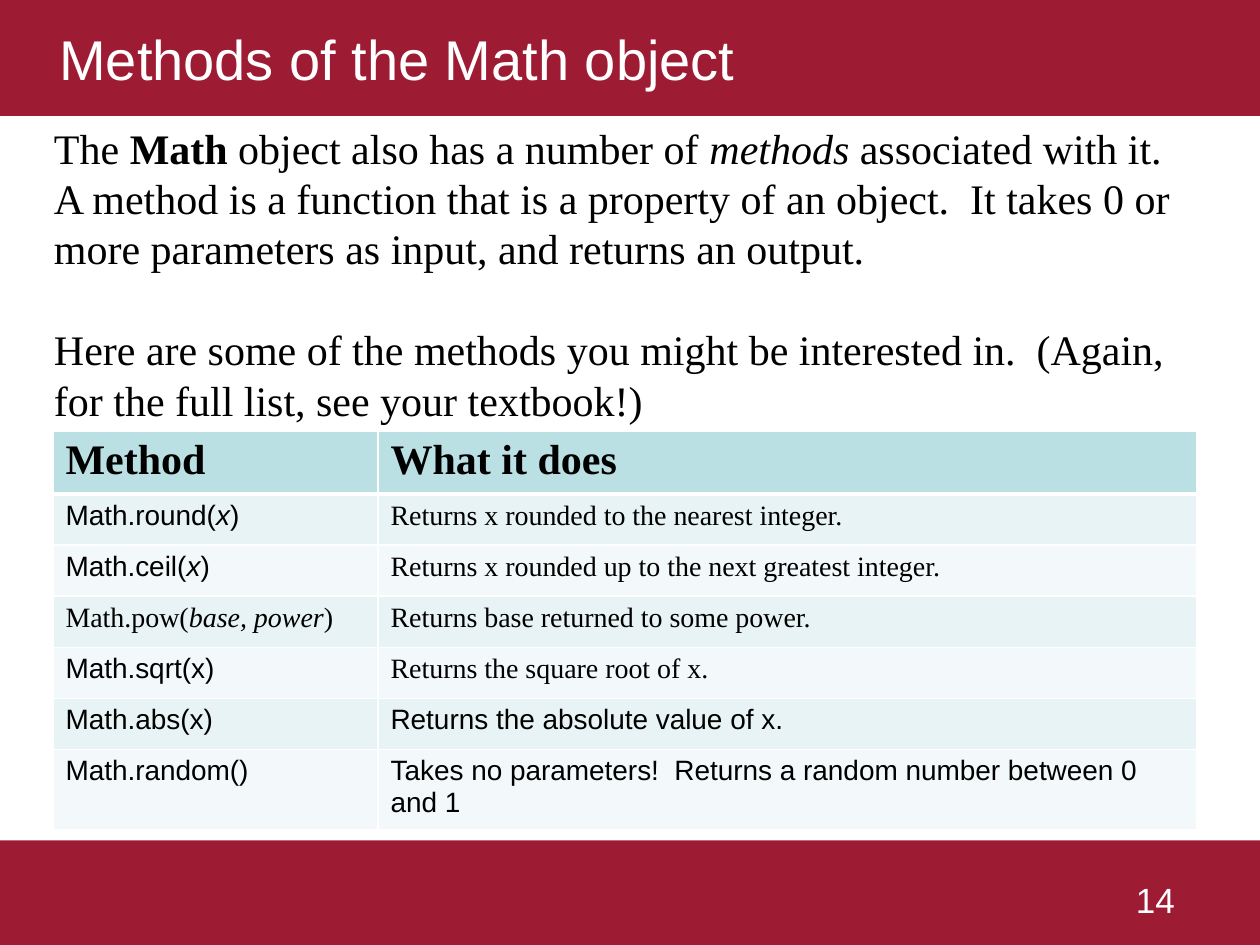
"""Build the slide on the methods of the Math object."""
from dataclasses import dataclass

import pptx
import pptx.dml.color
import pptx.enum.shapes
import pptx.enum.text
import pptx.oxml
import pptx.oxml.ns
import pptx.util

Inches = pptx.util.Inches
Pt = pptx.util.Pt
Align = pptx.enum.text.PP_ALIGN


@dataclass(frozen=True)
class Theme:
    """Colours, fonts and type sizes of the slide."""
    band: str = "9E1B34"
    light: str = "FFFFFF"
    ink: str = "000000"
    header: str = "BBE0E3"
    stripes: tuple = ("E7F3F4", "F3F9FA")
    sans: str = "Arial"
    serif: str = "Times New Roman"
    title: int = 32
    body: int = 24
    number: int = 20
    cell: int = 16


THEME = Theme()
PLAIN, BOLD, ITALIC = {}, {"bold": True}, {"italic": True}

INTRO = [
    [("The ", PLAIN), ("Math", BOLD), (" object also has a number of ", PLAIN),
     ("methods", ITALIC),
     (" associated with it.  A method is a function that is a property of an object.  "
      "It takes 0 or more parameters as input, and returns an output.", PLAIN)],
    [("Here are some of the methods you might be interested in.  "
      "(Again, for the full list, see your textbook!)", PLAIN)],
]

METHODS = [
    ("round", "x", ITALIC, THEME.sans, "Returns x rounded to the nearest integer.", THEME.serif),
    ("ceil", "x", ITALIC, THEME.sans,
     "Returns x rounded up to the next greatest integer.", THEME.serif),
    ("pow", "base, power", ITALIC, THEME.serif,
     "Returns base returned to some power.", THEME.serif),
    ("sqrt", "x", PLAIN, THEME.sans, "Returns the square root of x.", THEME.serif),
    ("abs", "x", PLAIN, THEME.sans, "Returns the absolute value of x.", THEME.sans),
    ("random", "", PLAIN, THEME.sans,
     "Takes no parameters!  Returns a random number between 0 and 1", THEME.sans),
]


def apply(target, values):
    """Set each named attribute on the target."""
    for name, value in values.items():
        setattr(target, name, value)


def place(left, top, width, height):
    """Return a position and size in inches as attribute values."""
    return {"left": Inches(left), "top": Inches(top),
            "width": Inches(width), "height": Inches(height)}


def paint(filled, color):
    """Give a shape or a cell a solid fill."""
    filled.fill.solid()
    filled.fill.fore_color.rgb = pptx.dml.color.RGBColor.from_string(color)


def write(paragraph, runs, font, size, color=THEME.ink):
    """Add styled runs to a paragraph."""
    for text, style in runs:
        run = paragraph.add_run()
        run.text = text
        apply(run.font, {"name": font, "size": Pt(size), "bold": False, "italic": False, **style})
        run.font.color.rgb = pptx.dml.color.RGBColor.from_string(color)


def add_title(slide, text):
    """Fill the title placeholder as the top band."""
    title = slide.shapes.title
    apply(title, place(0, 0, 10, 0.92))
    paint(title, THEME.band)
    apply(title.text_frame, {"margin_left": Inches(0.47), "word_wrap": True,
                             "auto_size": pptx.enum.text.MSO_AUTO_SIZE.NONE,
                             "vertical_anchor": pptx.enum.text.MSO_ANCHOR.MIDDLE})
    heading = title.text_frame.paragraphs[0]
    heading.alignment = Align.LEFT
    write(heading, [(text, PLAIN)], THEME.sans, THEME.title, THEME.light)


def add_footer(slide):
    """Draw the bottom band."""
    footer = slide.shapes.add_shape(pptx.enum.shapes.MSO_SHAPE.RECTANGLE,
                                    **place(0, 6.67, 10, 0.83))
    footer.shadow.inherit = False
    paint(footer, THEME.band)
    footer.line.fill.background()


def add_text(slide, box, paragraphs, font, size, color, alignment):
    """Add a wrapping text box with paragraphs one line apart."""
    frame = slide.shapes.add_textbox(**box).text_frame
    frame.word_wrap = True
    for index, runs in enumerate(paragraphs):
        paragraph = frame.paragraphs[0] if index == 0 else frame.add_paragraph()
        paragraph.alignment = alignment
        if index:
            paragraph.space_before = Pt(size * 1.2)
        write(paragraph, runs, font, size, color)


def add_borders(cell, top, bottom):
    """Draw light borders around a cell, with widths in points."""
    properties = cell._tc.get_or_add_tcPr()
    for side, width in {"L": 1, "R": 1, "T": top, "B": bottom}.items():
        properties.append(pptx.oxml.parse_xml(
            f'<a:ln{side} {pptx.oxml.ns.nsdecls("a")} w="{Pt(width)}"><a:solidFill>'
            f'<a:srgbClr val="{THEME.light}"/></a:solidFill></a:ln{side}>'))


def add_methods(slide):
    """Add the table of methods and what they do."""
    rows = [[([("Method", BOLD)], THEME.serif), ([("What it does", BOLD)], THEME.serif)]]
    for name, parameters, style, name_font, effect, effect_font in METHODS:
        call = [(f"Math.{name}(", PLAIN), (parameters, style), (")", PLAIN)]
        if not style:
            call = [(f"Math.{name}({parameters})", PLAIN)]
        rows.append([(call, name_font), ([(effect, PLAIN)], effect_font)])
    methods = slide.shapes.add_table(len(rows), 2, **place(0.42, 3.42, 9.08, 2.84)).table
    for column, width in zip(methods.columns, (2.58, 6.5)):
        column.width = Inches(width)
    for index, row in enumerate(rows):
        methods.rows[index].height = Pt(29.2)
        fill = THEME.stripes[(index - 1) % 2] if index else THEME.header
        for column, (runs, font) in enumerate(row):
            cell = methods.cell(index, column)
            add_borders(cell, top=3 if index == 1 else 1, bottom=1 if index else 3)
            paint(cell, fill)
            write(cell.text_frame.paragraphs[0], runs, font,
                  THEME.cell if index else THEME.body)


def main():
    """Build and save the slide."""
    deck = pptx.Presentation()
    apply(deck, {"slide_width": Inches(10), "slide_height": Inches(7.5)})
    slide = deck.slides.add_slide(deck.slide_layouts[5])
    add_title(slide, "Methods of the Math object")
    add_footer(slide)
    add_text(slide, place(7.17, 6.92, 2.33, 0.33), [[("14 ", PLAIN)]],
             THEME.sans, THEME.number, THEME.light, Align.RIGHT)
    add_text(slide, place(0.33, 0.92, 9.25, 3.2), INTRO,
             THEME.serif, THEME.body, THEME.ink, Align.LEFT)
    add_methods(slide)
    deck.save("out.pptx")


if __name__ == "__main__":
    main()
